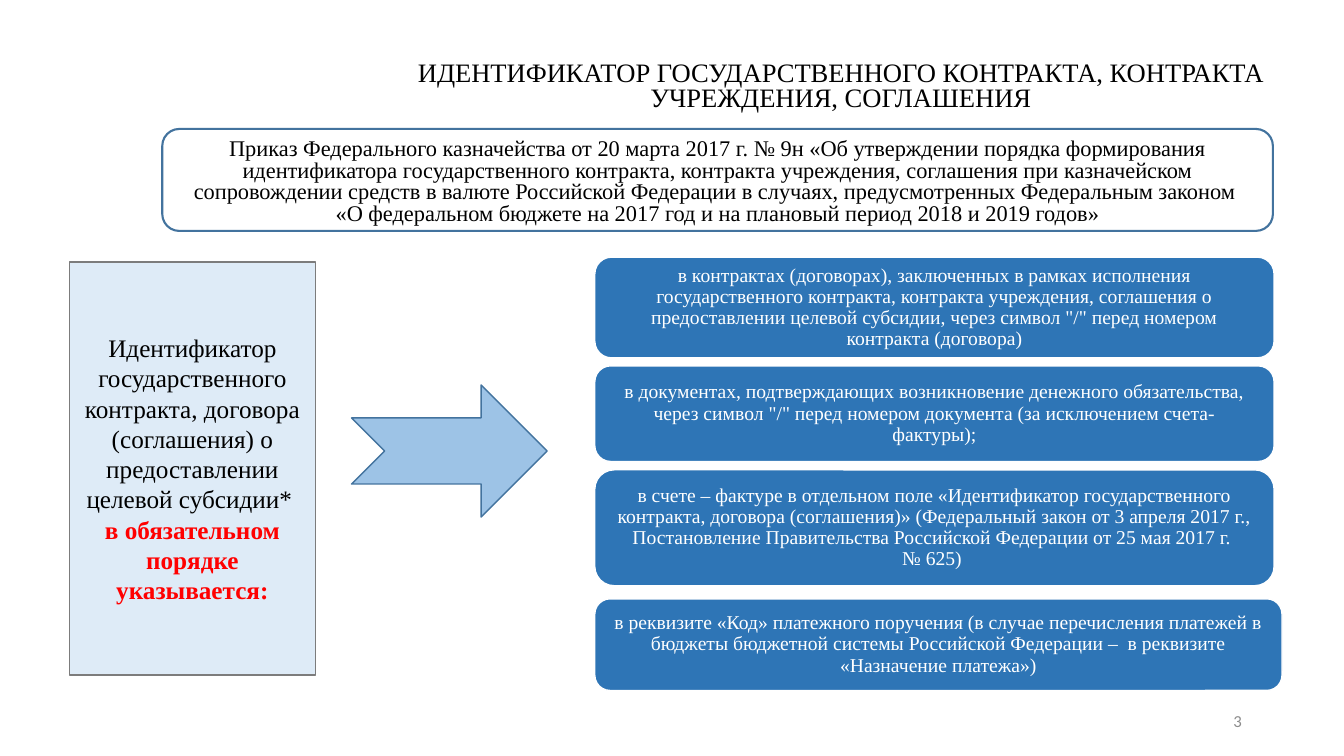
from pptx import Presentation
from pptx import util as u
from pptx.dml.color import RGBColor
from pptx.enum import shapes, text

BLACK = RGBColor(0x00, 0x00, 0x00)
WHITE = RGBColor(0xFF, 0xFF, 0xFF)
RED = RGBColor(0xFF, 0x00, 0x00)
GRAY = RGBColor(0x8C, 0x8C, 0x8C)
EDGE = RGBColor(0x7C, 0x7C, 0x7C)
PALE = RGBColor(0xDE, 0xEB, 0xF7)
SKY = RGBColor(0x9D, 0xC3, 0xE6)
STEEL = RGBColor(0x43, 0x73, 0x9E)
BLUE = RGBColor(0x2E, 0x75, 0xB6)

KIND = shapes.MSO_SHAPE
ALIGN = text.PP_ALIGN
ANCHOR = text.MSO_ANCHOR

TITLE = "ИДЕНТИФИКАТОР ГОСУДАРСТВЕННОГО КОНТРАКТА, КОНТРАКТА УЧРЕЖДЕНИЯ, СОГЛАШЕНИЯ"
ORDER = (
    "Приказ Федерального казначейства от 20 марта 2017 г. № 9н «Об утверждении "
    "порядка формирования идентификатора государственного контракта, контракта "
    "учреждения, соглашения при казначейском сопровождении средств в валюте "
    "Российской Федерации в случаях, предусмотренных Федеральным законом \v"
    "«О федеральном бюджете на 2017 год и на плановый период 2018 и 2019 годов»"
)
SUBJECT = (
    "Идентификатор государственного контракта, договора (соглашения) "
    "о предоставлении целевой субсидии* "
)
DUTY = "в обязательном порядке указывается:"

# top, height, width, side inset, wording
CASES = [
    (6.48, 2.54, 17.12, 0.35,
     "в контрактах (договорах), заключенных в рамках исполнения государственного "
     "контракта, контракта учреждения, соглашения о предоставлении целевой "
     'субсидии, через символ "/" перед номером контракта (договора)'),
    (9.22, 2.41, 17.12, 0.5,
     "в документах, подтверждающих возникновение денежного обязательства, через "
     'символ "/" перед номером документа (за исключением счета-фактуры);'),
    (11.84, 2.92, 17.12, 0.35,
     "в счете – фактуре в отдельном поле «Идентификатор государственного контракта, "
     "договора (соглашения)» (Федеральный закон от 3 апреля 2017 г., Постановление "
     "Правительства Российской Федерации от 25 мая 2017 г. \v№ 625) "),
    (15.09, 2.31, 17.32, 0.35,
     "в реквизите «Код» платежного поручения (в случае перечисления платежей в "
     "бюджеты бюджетной системы Российской Федерации –  в реквизите "
     "«Назначение платежа»)"),
]


class Deck:
    base = {"name": "Times New Roman", "size": u.Pt(18)}

    def __init__(self):
        self.prs = Presentation()
        self.prs.slide_width = u.Cm(33.87)
        self.prs.slide_height = u.Cm(19.05)
        self.slide = self.prs.slides.add_slide(self.prs.slide_layouts[6])

    def letter(self, shape, lines, anchor=ANCHOR.MIDDLE, align=ALIGN.CENTER,
               pitch=None, inset=None, **font):
        """Fill a shape with (wording, font values) paragraphs."""
        frame = shape.text_frame
        frame.word_wrap = True
        frame.vertical_anchor = anchor
        for side, size in (inset or {}).items():
            setattr(frame, "margin_" + side, u.Cm(size))
        for n, (words, extra) in enumerate(lines):
            para = frame.add_paragraph() if n else frame.paragraphs[0]
            para.text = words
            para.alignment = align
            para.line_spacing = pitch
            look = {**self.base, **font, **extra}
            color = look.pop("color")
            for run in para.runs:
                run.font.color.rgb = color
                for key, value in look.items():
                    setattr(run.font, key, value)

    def label(self, box, words, **form):
        shape = self.slide.shapes.add_textbox(*map(u.Cm, box))
        self.letter(shape, [(words, {})], **form)

    def block(self, kind, box, fill, edge, width=1, lines=(), **form):
        shape = self.slide.shapes.add_shape(kind, *map(u.Cm, box))
        shape.shadow.inherit = False
        shape.fill.solid()
        shape.fill.fore_color.rgb = fill
        shape.line.color.rgb = edge
        shape.line.width = u.Pt(width)
        self.letter(shape, lines, **form)


def main():
    deck = Deck()
    deck.label((8.53, 1.45, 25.32, 1.55), TITLE, anchor=ANCHOR.TOP,
               pitch=u.Pt(18), size=u.Pt(19), color=BLACK)
    deck.block(KIND.FLOWCHART_ALTERNATE_PROCESS, (4.09, 3.25, 27.99, 2.57),
               WHITE, STEEL, 1.5, [(ORDER, {})], pitch=0.8,
               inset={"top": 0.25}, size=u.Pt(16), color=BLACK)
    deck.block(KIND.RECTANGLE, (1.75, 6.6, 6.2, 10.41), PALE, EDGE,
               lines=[(SUBJECT, {}), (DUTY, {"color": RED, "bold": True})],
               color=BLACK)
    deck.block(KIND.NOTCHED_RIGHT_ARROW, (8.86, 9.7, 4.93, 3.33), SKY, STEEL)
    for top, height, width, side, words in CASES:
        deck.block(KIND.ROUNDED_RECTANGLE, (14.99, top, width, height),
                   BLUE, WHITE, lines=[(words, {})], pitch=0.9,
                   inset={"left": side, "right": side},
                   size=u.Pt(14), color=WHITE)
    deck.label((23.93, 17.65, 7.62, 1.02), "3", align=ALIGN.RIGHT,
               name="Calibri", size=u.Pt(12), color=GRAY)
    deck.prs.save("out.pptx")


if __name__ == "__main__":
    main()
